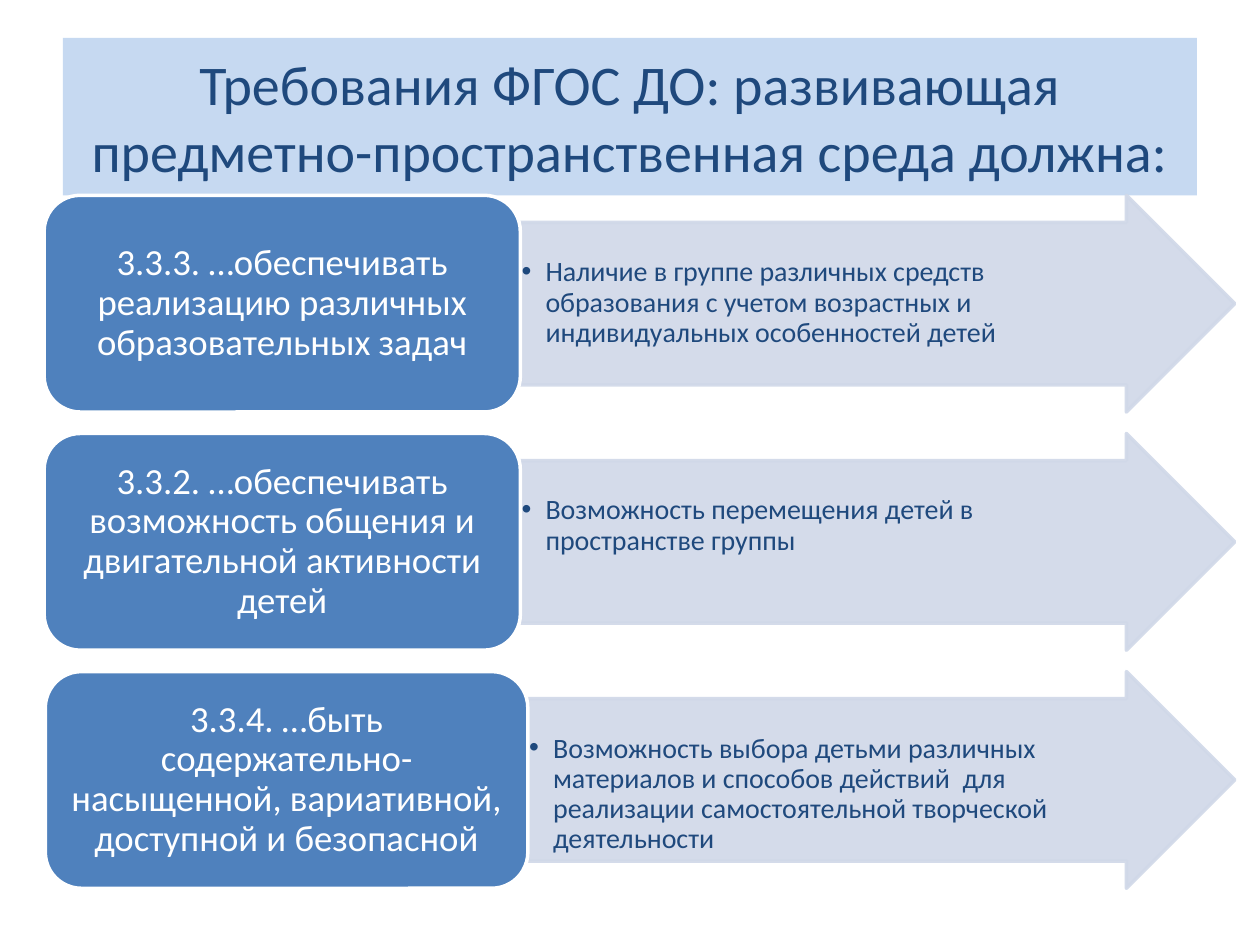
from dataclasses import dataclass

from lxml import etree
from pptx import Presentation
from pptx.dml.color import RGBColor
from pptx.enum import shapes, text
from pptx.oxml import ns
from pptx.util import Inches, Pt

HUES = {
    "band": "C6D9F1",
    "navy": "1F497D",
    "card": "4F81BD",
    "arrow": "D0D8E8",
    "white": "FFFFFF",
}
KIND = shapes.MSO_SHAPE
ALIGN = text.PP_ALIGN
ANCHOR = text.MSO_ANCHOR
TOP, STEP, TALL, EDGE = 1.55, 1.89, 1.72, 9.8


@dataclass
class Row:
    left: float
    wide: float
    task: str
    need: str


ROWS = [
    Row(0.35, 3.78,
        "3.3.3. …обеспечивать реализацию различных образовательных задач",
        "Наличие в группе различных средств образования с учетом "
        "возрастных и индивидуальных особенностей детей"),
    Row(0.35, 3.78,
        "3.3.2. …обеспечивать возможность общения и двигательной "
        "активности детей",
        "Возможность перемещения детей в пространстве группы"),
    Row(0.36, 3.83,
        "3.3.4. …быть содержательно-насыщенной, вариативной, доступной "
        "и безопасной",
        "Возможность выбора детьми различных материалов и способов "
        "действий  для реализации самостоятельной творческой деятельности"),
]


def tint(name: str) -> RGBColor:
    return RGBColor.from_string(HUES[name])


def block(slide, kind, box: tuple, fill: str, line: str = ""):
    shape = slide.shapes.add_shape(kind, *map(Inches, box))
    shape.shadow.inherit = False
    shape.fill.solid()
    shape.fill.fore_color.rgb = tint(fill)
    if line:
        shape.line.color.rgb = tint(line)
        shape.line.width = Pt(2)
    else:
        shape.line.fill.background()
    return shape


def fade(shape, share: int) -> None:
    for hue in shape._element.spPr.iter(ns.qn("a:srgbClr")):
        etree.SubElement(hue, ns.qn("a:alpha"), val=str(share * 1000))


def dot(para, gap: float) -> None:
    props = para._p.get_or_add_pPr()
    props.set("marL", str(Inches(gap)))
    props.set("indent", str(-Inches(gap)))
    etree.SubElement(props, ns.qn("a:buFont"), typeface="Arial")
    etree.SubElement(props, ns.qn("a:buChar"), char="•")


def write(shape, words: str, size: int, hue: str, pads: tuple,
          space: float = 0.9, list_gap: float = 0) -> None:
    frame = shape.text_frame
    frame.word_wrap = True
    (frame.margin_left, frame.margin_top,
     frame.margin_right, frame.margin_bottom) = map(Inches, pads)
    frame.vertical_anchor = ANCHOR.TOP if list_gap else ANCHOR.MIDDLE
    para = frame.paragraphs[0]
    para.text = words
    para.alignment = ALIGN.LEFT if list_gap else ALIGN.CENTER
    para.line_spacing = space
    if list_gap:
        dot(para, list_gap)
    para.font.name = "Calibri"
    para.font.size = Pt(size)
    para.font.color.rgb = tint(hue)


def draw(slide, row: Row, top: float) -> None:
    start = row.left + row.wide
    arrow = block(slide, KIND.RIGHT_ARROW,
                  (start, top, EDGE - start, TALL), "arrow", "arrow")
    arrow.adjustments[0] = 0.75
    arrow.adjustments[1] = 0.5
    fade(arrow, 90)
    write(arrow, row.need, 16, "navy", (0.01, 0.28, 0.44, 0.01),
          list_gap=0.19)
    card = block(slide, KIND.ROUNDED_RECTANGLE,
                 (row.left, top, row.wide, TALL), "card", "white")
    write(card, row.task, 21, "white", (0.09, 0.04, 0.09, 0.04))


def main() -> None:
    deck = Presentation()
    deck.slide_width, deck.slide_height = Inches(10), Inches(7.5)
    slide = deck.slides.add_slide(deck.slide_layouts[6])
    title = block(slide, KIND.RECTANGLE, (0.5, 0.3, 9, 1.25), "band")
    write(title,
          "Требования ФГОС ДО: развивающая предметно-пространственная "
          "среда должна:",
          32, "navy", (0.1, 0.05, 0.1, 0.05), space=1.0)
    for rank, row in enumerate(ROWS):
        draw(slide, row, TOP + rank * STEP)
    deck.save("out.pptx")


if __name__ == "__main__":
    main()
